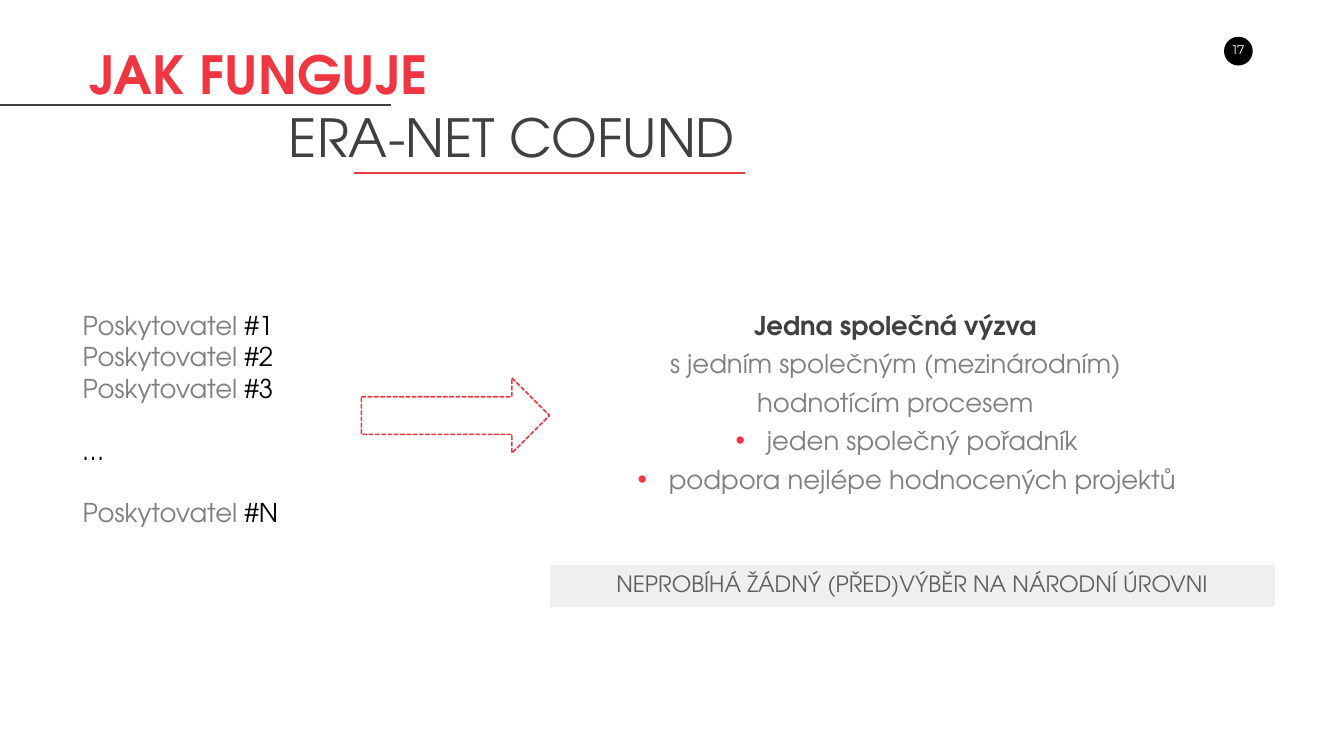
"""Build the slide that explains how ERA-NET Cofund works."""
from lxml import etree
from pptx import Presentation
from pptx import util as u
from pptx.dml.color import RGBColor
from pptx.enum import dml, shapes, text
from pptx.oxml.ns import qn

COLORS = {
    "red": "F03741", "rule": "E83B44", "dark": "404040", "grey": "7F7F7F",
    "black": "000000", "white": "FFFFFF", "bar": "EFEFEF", "bar_text": "5F5F5F",
}
FONT = "TeX Gyre Adventor"
BODY = 37
CENTER = text.PP_ALIGN.CENTER


def rgb(name):
    return RGBColor.from_string(COLORS[name])


def box(at):
    return [u.Inches(v) for v in at]


def set_frame(tf, dx, dy, anchor=text.MSO_ANCHOR.TOP, wrap=True):
    tf.margin_left = tf.margin_right = u.Inches(dx)
    tf.margin_top = tf.margin_bottom = u.Inches(dy)
    tf.vertical_anchor = anchor
    tf.word_wrap = wrap
    return tf


def add_textbox(s, at, dx=0.27, dy=0.13, **frame):
    return set_frame(s.shapes.add_textbox(*box(at)).text_frame, dx, dy, **frame)


def add_paragraph(tf, runs, size=BODY, font=FONT, align=None, before=0):
    """Write (text, colour, bold) runs into the empty first or a new paragraph."""
    p = tf.paragraphs[0]
    if p.runs:
        p = tf.add_paragraph()
        p.space_before = u.Pt(before)
    p.alignment = align
    for words, color, bold in runs:
        r = p.add_run()
        r.text = words
        r.font.name, r.font.size, r.font.bold = font, u.Pt(size), bold
        r.font.color.rgb = rgb(color)
    return p


def set_indent(p, left, first=0):
    pPr = p._p.get_or_add_pPr()
    pPr.set("marL", str(u.Inches(left)))
    pPr.set("indent", str(u.Inches(first)))
    return pPr


def add_bullet(p):
    pPr = set_indent(p, 1.07, -0.62)
    color = etree.SubElement(pPr, qn("a:buClr"))
    etree.SubElement(color, qn("a:srgbClr"), val=COLORS["red"])
    etree.SubElement(pPr, qn("a:buSzPct"), val="104000")
    etree.SubElement(pPr, qn("a:buFont"), typeface="Arial")
    etree.SubElement(pPr, qn("a:buChar"), char="•")


def add_shape(s, kind, at, fill=None, line=None, width=0.75):
    sp = s.shapes.add_shape(kind, *box(at))
    sp.shadow.inherit = False
    for part, color in ((sp.fill, fill), (sp.line.fill, line)):
        if color:
            part.solid()
            part.fore_color.rgb = rgb(color)
        else:
            part.background()
    if line:
        sp.line.width = u.Pt(width)
    return sp


def add_rule(s, x, y, color, length=7.76):
    c = s.shapes.add_connector(shapes.MSO_CONNECTOR.STRAIGHT, *box((x, y, x + length, y)))
    c.line.color.rgb = rgb(color)
    c.line.width = u.Pt(2.25)
    etree.SubElement(c._element.spPr, qn("a:effectLst"))


def add_page_number(s):
    add_shape(s, shapes.MSO_SHAPE.OVAL, (24.28, 0.73, 0.57, 0.57), "black")
    tf = add_textbox(s, (24.14, 0.73, 0.86, 0.5), 0.2, 0.1, wrap=False)
    add_paragraph(tf, [("17", "white", False)], 18, "Montserrat", CENTER)


def add_title(s):
    tf = add_textbox(s, (1.51, 1.37, 21.22, 1.42), dy=0.27, anchor=text.MSO_ANCHOR.MIDDLE)
    add_paragraph(tf, [("JAK FUNGUJE", "red", True)], 75)
    set_indent(add_paragraph(tf, [("ERA-NET COFUND", "dark", False)], 75), 3.95)
    add_rule(s, 0, 2.08, "dark")
    add_rule(s, 7.02, 3.43, "rule")


def add_providers(s):
    tf = add_textbox(s, (1.37, 6.02, 5.42, 5.45))
    gap = BODY * 1.2
    for number, before in (("1", 0), ("2", 0), ("3", 0), (None, gap), ("N", gap)):
        if number:
            runs = [("Poskytovatel", "grey", False), (f" #{number}", "black", False)]
        else:
            runs = [("…", "black", False)]
        add_paragraph(tf, runs, before=before)


def add_call(s):
    tf = add_textbox(s, (11.68, 6.01, 12.16, 5.17))
    add_paragraph(tf, [("Jedna společná výzva", "dark", True)], align=CENTER)
    for words, bullet in (
        ("s jedním společným (mezinárodním)", False),
        ("hodnotícím procesem", False),
        ("jeden společný pořadník", True),
        ("podpora nejlépe hodnocených projektů", True),
    ):
        p = add_paragraph(tf, [(words, "grey", False)], align=CENTER, before=10.7)
        if bullet:
            add_bullet(p)


def add_note_bar(s):
    sp = add_shape(s, shapes.MSO_SHAPE.RECTANGLE, (10.9, 11.19, 14.39, 0.86), "bar", "white")
    tf = set_frame(sp.text_frame, 0.27, 0.13)
    words = "NEPROBÍHÁ ŽÁDNÝ (PŘED)VÝBĚR NA NÁRODNÍ ÚROVNI"
    add_paragraph(tf, [(words, "bar_text", False)], 32, align=CENTER)


def main():
    prs = Presentation()
    prs.slide_width, prs.slide_height = u.Inches(26.66), u.Inches(15)
    s = prs.slides.add_slide(prs.slide_layouts[6])
    add_page_number(s)
    add_title(s)
    add_providers(s)
    arrow = add_shape(s, shapes.MSO_SHAPE.RIGHT_ARROW, (7.17, 7.5, 3.73, 1.49),
                      line="red", width=2.25)
    arrow.line.dash_style = dml.MSO_LINE.SQUARE_DOT
    add_call(s)
    add_note_bar(s)
    prs.save("out.pptx")


if __name__ == "__main__":
    main()
